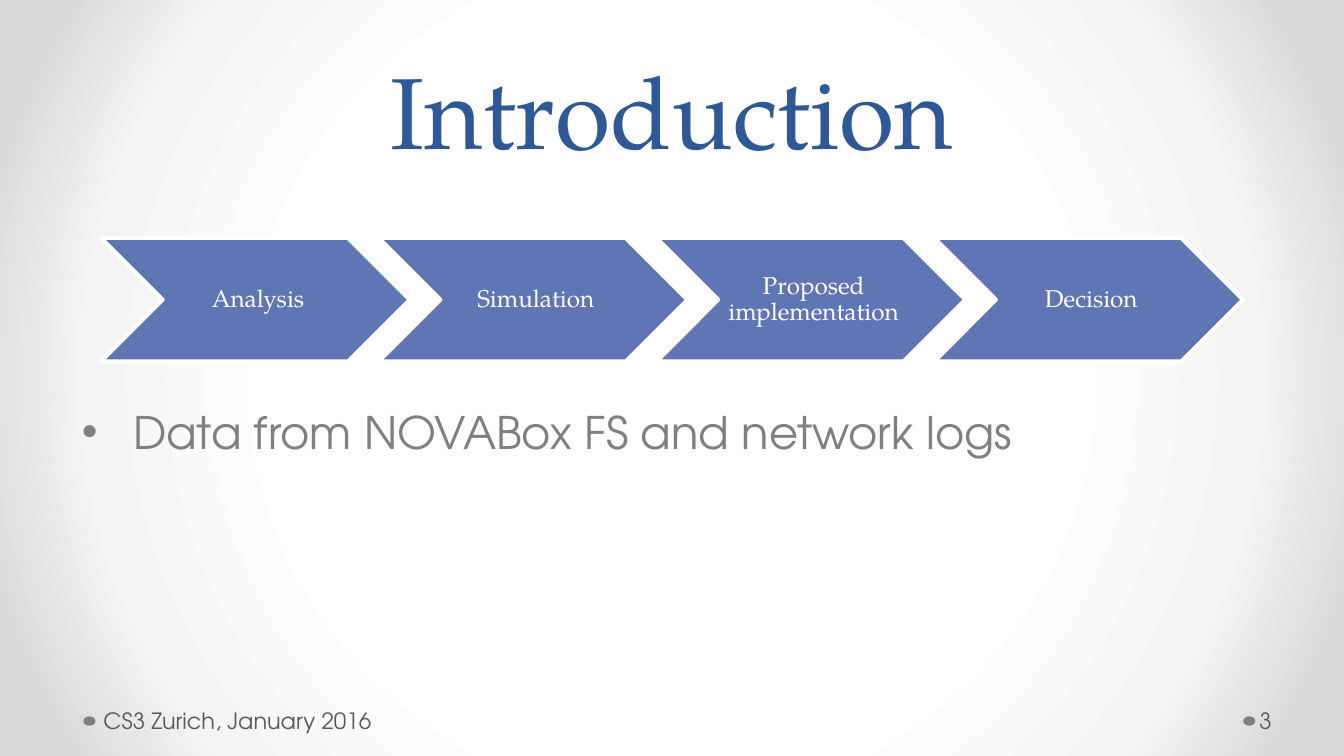
from lxml import etree
from pptx import Presentation
from pptx.dml.color import RGBColor
from pptx.enum.shapes import MSO_SHAPE
from pptx.enum.text import MSO_ANCHOR, MSO_AUTO_SIZE, PP_ALIGN
from pptx.oxml import parse_xml
from pptx.oxml.ns import nsdecls
from pptx.util import Inches, Pt

CHEVRON, OVAL = MSO_SHAPE.CHEVRON, MSO_SHAPE.OVAL
TOP, MIDDLE, BOTTOM = MSO_ANCHOR.TOP, MSO_ANCHOR.MIDDLE, MSO_ANCHOR.BOTTOM
LEFT, CENTER = PP_ALIGN.LEFT, PP_ALIGN.CENTER

SERIF, SANS = "TeX Gyre Pagella", "TeX Gyre Adventor"
NAVY = RGBColor(0x2F, 0x58, 0x97)
BLUE = RGBColor(0x60, 0x76, 0xB4)
GRAY = RGBColor(0x80, 0x80, 0x80)
DARK_GRAY = RGBColor(0x59, 0x59, 0x59)
WHITE = RGBColor(0xFF, 0xFF, 0xFF)

TITLE = "Introduction"
STEPS = ["Analysis", "Simulation", "Proposed implementation", "Decision"]
BULLET = "Data from NOVABox FS and network logs"
# text, text left, text width, left inset, dot left
FOOTERS = [
    ("CS3 Zurich, January 2016", 0.72, 3.11, 0.05, 0.62),
    ("3", 9.34, 0.61, 0.03, 9.25),
]
BACKGROUND_STOPS = [(50, WHITE), (76, RGBColor(0xF4, 0xF4, 0xF4)),
                    (92, RGBColor(0xDA, 0xDA, 0xDA))]

SLIDE_WIDTH = Inches(10)
SLIDE_HEIGHT = SLIDE_WIDTH * 9 // 16
STEP_TOP, STEP_WIDTH, STEP_HEIGHT = 1.77, 2.3, 0.92
FIRST_STEP_LEFT, LAST_STEP_LEFT = 0.75, 6.95
STEP_PITCH = (LAST_STEP_LEFT - FIRST_STEP_LEFT) / (len(STEPS) - 1)


def place(shape, left, top, width, height):
    shape.left, shape.top = Inches(left), Inches(top)
    shape.width, shape.height = Inches(width), Inches(height)


def write(shape, text, font, size, color, anchor, align=LEFT, insets=(0.1, 0.05, 0.1, 0.05)):
    """Set and format one paragraph; insets are left, top, right, bottom."""
    frame = shape.text_frame
    frame.text = text
    frame.word_wrap = True
    frame.auto_size = MSO_AUTO_SIZE.NONE
    frame.vertical_anchor = anchor
    (frame.margin_left, frame.margin_top,
     frame.margin_right, frame.margin_bottom) = map(Inches, insets)
    paragraph = frame.paragraphs[0]
    paragraph.alignment = align
    run_font = paragraph.runs[0].font
    run_font.name, run_font.size = font, Pt(size)
    run_font.color.rgb = color
    return paragraph


def add_filled_shape(slide, kind, box, color):
    shape = slide.shapes.add_shape(kind, *map(Inches, box))
    shape.shadow.inherit = False
    shape.fill.solid()
    shape.fill.fore_color.rgb = color
    shape.line.fill.background()
    return shape


def set_radial_background(slide):
    stops = "".join(
        f'<a:gs pos="{position * 1000}"><a:srgbClr val="{color}"/></a:gs>'
        for position, color in BACKGROUND_STOPS)
    gradient = parse_xml(
        f'<a:gradFill {nsdecls("a")} rotWithShape="1"><a:gsLst>{stops}</a:gsLst>'
        '<a:path path="circle"><a:fillToRect l="50000" t="50000" r="50000" b="50000"/>'
        '</a:path></a:gradFill>')
    fill = slide.background.fill
    fill.solid()
    properties = slide.element.cSld.bg.bgPr
    properties.replace(properties[0], gradient)


def set_bullet(paragraph, indent):
    properties = paragraph._p.get_or_add_pPr()
    properties.set("marL", str(Inches(indent)))
    properties.set("indent", str(-Inches(indent)))
    namespace = properties.nsmap["a"]
    etree.SubElement(properties, f"{{{namespace}}}buChar", char="•")


def main():
    presentation = Presentation()
    presentation.slide_width, presentation.slide_height = SLIDE_WIDTH, SLIDE_HEIGHT
    slide = presentation.slides.add_slide(presentation.slide_layouts[1])
    set_radial_background(slide)

    title = slide.shapes.title
    place(title, 0.5, 0, 9, 1.31)
    write(title, TITLE, SERIF, 54, NAVY, BOTTOM, CENTER).line_spacing = Pt(58)

    body = slide.placeholders[1]
    place(body, 0.51, 2.96, 9, 2.3)
    paragraph = write(body, BULLET, SANS, 24, GRAY, TOP)
    paragraph.space_before = Pt(0)
    set_bullet(paragraph, 0.38)

    for index, step in enumerate(STEPS):
        box = (FIRST_STEP_LEFT + index * STEP_PITCH, STEP_TOP, STEP_WIDTH, STEP_HEIGHT)
        chevron = add_filled_shape(slide, CHEVRON, box, BLUE)
        chevron.line.color.rgb = WHITE
        chevron.line.width = Pt(2.25)
        paragraph = write(chevron, step, SERIF, 13, WHITE, MIDDLE, CENTER,
                          (0.06, 0.02, 0.02, 0.02))
        paragraph.line_spacing = 0.9

    for text, left, width, inset, dot_left in FOOTERS:
        add_filled_shape(slide, OVAL, (dot_left, 5.33, 0.09, 0.07), GRAY)
        footer = slide.shapes.add_textbox(*map(Inches, (left, 5.21, width, 0.3)))
        write(footer, text, SANS, 12, DARK_GRAY, MIDDLE, insets=(inset, 0.05, 0.05, 0.05))

    presentation.save("out.pptx")


if __name__ == "__main__":
    main()
